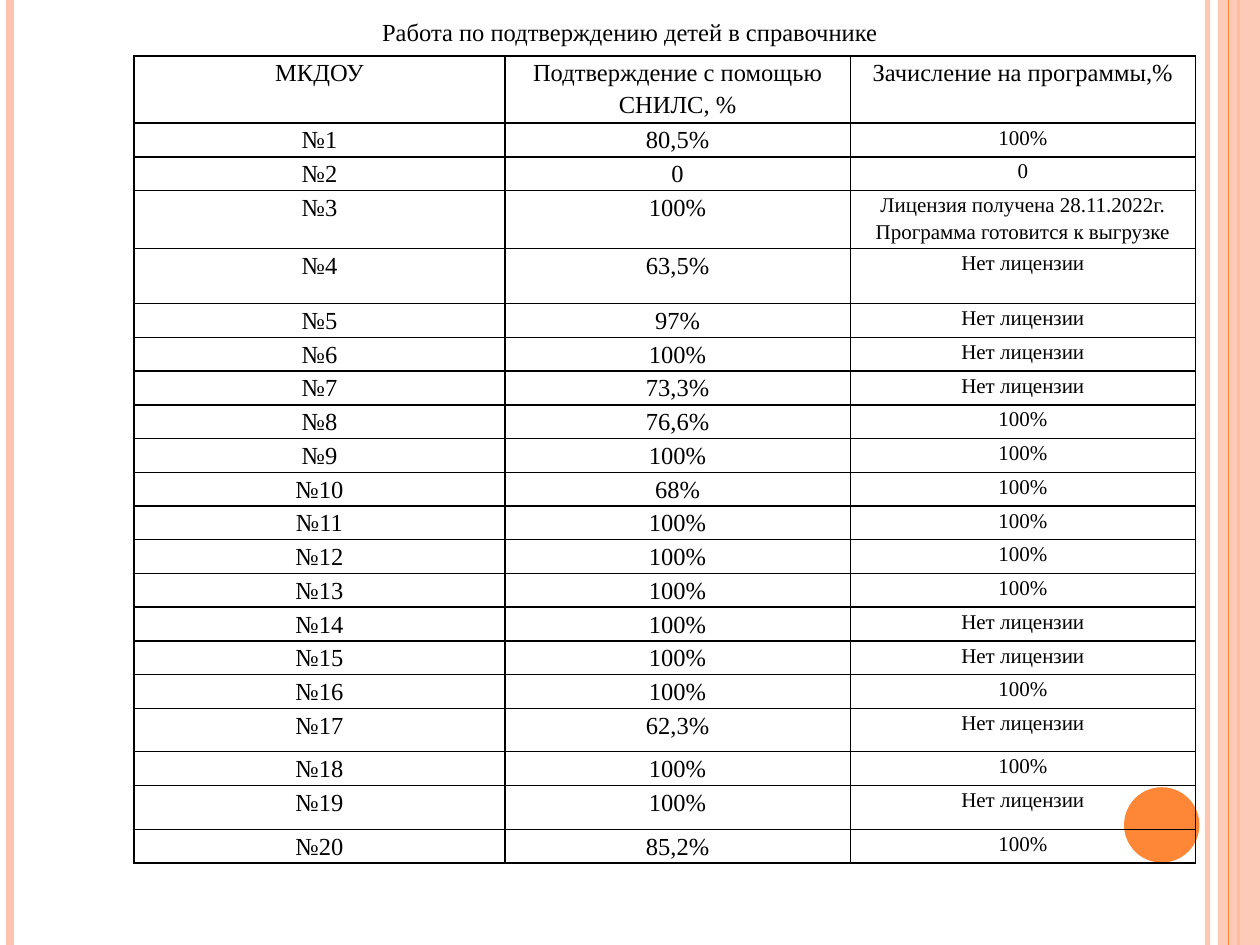
import dataclasses

import pptx
import pptx.dml.color
import pptx.enum.shapes
import pptx.enum.text
import pptx.oxml
import pptx.oxml.ns
import pptx.util
from lxml import etree
from pptx.util import Cm, Pt

PAGE_WIDTH, PAGE_HEIGHT = 25.4, 19.05


@dataclasses.dataclass(frozen=True)
class Theme:
    font: str = "Times New Roman"
    ink: str = "000000"
    peach: str = "FEC3AE"
    orange: str = "FE8637"
    main_size: int = 14
    note_size: int = 12
    border_width: int = 1


HEADER = ("МКДОУ", "Подтверждение с помощью СНИЛС, %", "Зачисление на программы,%")
NO_LICENCE = "Нет лицензии"
KINDERGARTENS = [
    ("80,5%", "100%"),
    ("0", "0"),
    ("100%", "Лицензия получена 28.11.2022г.\nПрограмма готовится к выгрузке"),
    ("63,5%", NO_LICENCE),
    ("97%", NO_LICENCE),
    ("100%", NO_LICENCE),
    ("73,3%", NO_LICENCE),
    ("76,6%", "100%"),
    ("100%", "100%"),
    ("68%", "100%"),
    ("100%", "100%"),
    ("100%", "100%"),
    ("100%", "100%"),
    ("100%", NO_LICENCE),
    ("100%", NO_LICENCE),
    ("100%", "100%"),
    ("62,3%", NO_LICENCE),
    ("100%", "100%"),
    ("100%", NO_LICENCE),
    ("85,2%", "100%"),
]
COLUMN_WIDTHS = (7.48, 6.96, 6.96)
ROW_HEIGHT = 0.68
TALL_ROWS = {0: 1.35, 3: 1.17, 4: 1.11, 17: 0.87, 19: 0.89}


class SlideBuilder:
    def __init__(self, slide, theme):
        self.slide = slide
        self.theme = theme

    def colour(self, value):
        return pptx.dml.color.RGBColor.from_string(value)

    def set_opacity(self, element, percent):
        """Make the first colour found inside the element partly transparent."""
        colour = element.find(".//" + pptx.oxml.ns.qn("a:srgbClr"))
        etree.SubElement(colour, pptx.oxml.ns.qn("a:alpha"), val=str(percent * 1000))

    def format_paragraph(self, para, size, spacing=1.0):
        para.alignment = pptx.enum.text.PP_ALIGN.CENTER
        para.line_spacing = spacing
        para.font.name = self.theme.font
        para.font.size = Pt(size)
        para.font.color.rgb = self.colour(self.theme.ink)

    def title(self, text, left, top, width, height):
        box = self.slide.shapes.title
        box.left, box.top, box.width, box.height = map(Cm, (left, top, width, height))
        frame = box.text_frame
        frame.text = text
        frame.word_wrap = True
        frame.auto_size = pptx.enum.text.MSO_AUTO_SIZE.NONE
        frame.vertical_anchor = pptx.enum.text.MSO_ANCHOR.MIDDLE
        self.format_paragraph(frame.paragraphs[0], self.theme.main_size)

    def vertical_line(self, x, colour, width, opacity=100):
        line = self.slide.shapes.add_connector(
            pptx.enum.shapes.MSO_CONNECTOR.STRAIGHT, Cm(x), 0, Cm(x), Cm(PAGE_HEIGHT))
        line.line.color.rgb = self.colour(colour)
        line.line.width = Pt(width)
        properties = line._element.spPr
        if opacity < 100:
            self.set_opacity(properties, opacity)
        etree.SubElement(properties, pptx.oxml.ns.qn("a:effectLst"))

    def shape(self, kind, left, top, width, height, colour, opacity=100):
        shape = self.slide.shapes.add_shape(kind, *map(Cm, (left, top, width, height)))
        shape.shadow.inherit = False
        shape.fill.solid()
        shape.fill.fore_color.rgb = self.colour(colour)
        shape.line.fill.background()
        if opacity < 100:
            self.set_opacity(shape._element.spPr, opacity)

    def cell_borders(self, cell):
        properties = cell._tc.get_or_add_tcPr()
        for side in ("lnL", "lnR", "lnT", "lnB"):
            properties.append(pptx.oxml.parse_xml(
                f'<a:{side} {pptx.oxml.ns.nsdecls("a")} w="{Pt(self.theme.border_width)}">'
                f'<a:solidFill><a:srgbClr val="{self.theme.ink}"/></a:solidFill></a:{side}>'))

    def cell(self, cell, text, size):
        cell.text = text
        cell.margin_left = cell.margin_right = Cm(0.1)
        cell.margin_top = cell.margin_bottom = 0
        self.cell_borders(cell)
        cell.fill.background()
        for para in cell.text_frame.paragraphs:
            self.format_paragraph(para, size, 1.15)

    def table(self, rows, left, top):
        heights = [TALL_ROWS.get(index, ROW_HEIGHT) for index in range(len(rows))]
        table = self.slide.shapes.add_table(
            len(rows), len(COLUMN_WIDTHS), Cm(left), Cm(top),
            Cm(sum(COLUMN_WIDTHS)), Cm(sum(heights))).table
        table.first_row = table.horz_banding = False
        for column, width in zip(table.columns, COLUMN_WIDTHS):
            column.width = Cm(width)
        for row_index, (row, height) in enumerate(zip(rows, heights)):
            table.rows[row_index].height = Cm(height)
            for column_index, text in enumerate(row):
                is_note = row_index > 0 and column_index == 2
                size = self.theme.note_size if is_note else self.theme.main_size
                self.cell(table.cell(row_index, column_index), text, size)


def main():
    deck = pptx.Presentation()
    deck.slide_width, deck.slide_height = Cm(PAGE_WIDTH), Cm(PAGE_HEIGHT)
    theme = Theme()
    page = SlideBuilder(deck.slides.add_slide(deck.slide_layouts[5]), theme)
    shapes = pptx.enum.shapes.MSO_SHAPE

    page.vertical_line(24.34, theme.peach, 3, opacity=93)
    page.vertical_line(0.21, theme.peach, 4.5)
    page.vertical_line(24.97, theme.orange, 1.5)
    page.shape(shapes.RECTANGLE, 24.55, 0, 0.85, PAGE_HEIGHT, theme.peach, opacity=87)
    page.vertical_line(24.77, theme.orange, 0.75)
    page.shape(shapes.OVAL, 22.66, 15.87, 1.52, 1.52, theme.orange)

    rows = [HEADER] + [(f"№{number}", *values)
                       for number, values in enumerate(KINDERGARTENS, start=1)]
    page.table(rows, 2.7, 1.13)
    page.title("Работа по подтверждению детей в справочнике", 0, 0, PAGE_WIDTH, 1.27)
    deck.save("out.pptx")


if __name__ == "__main__":
    main()
